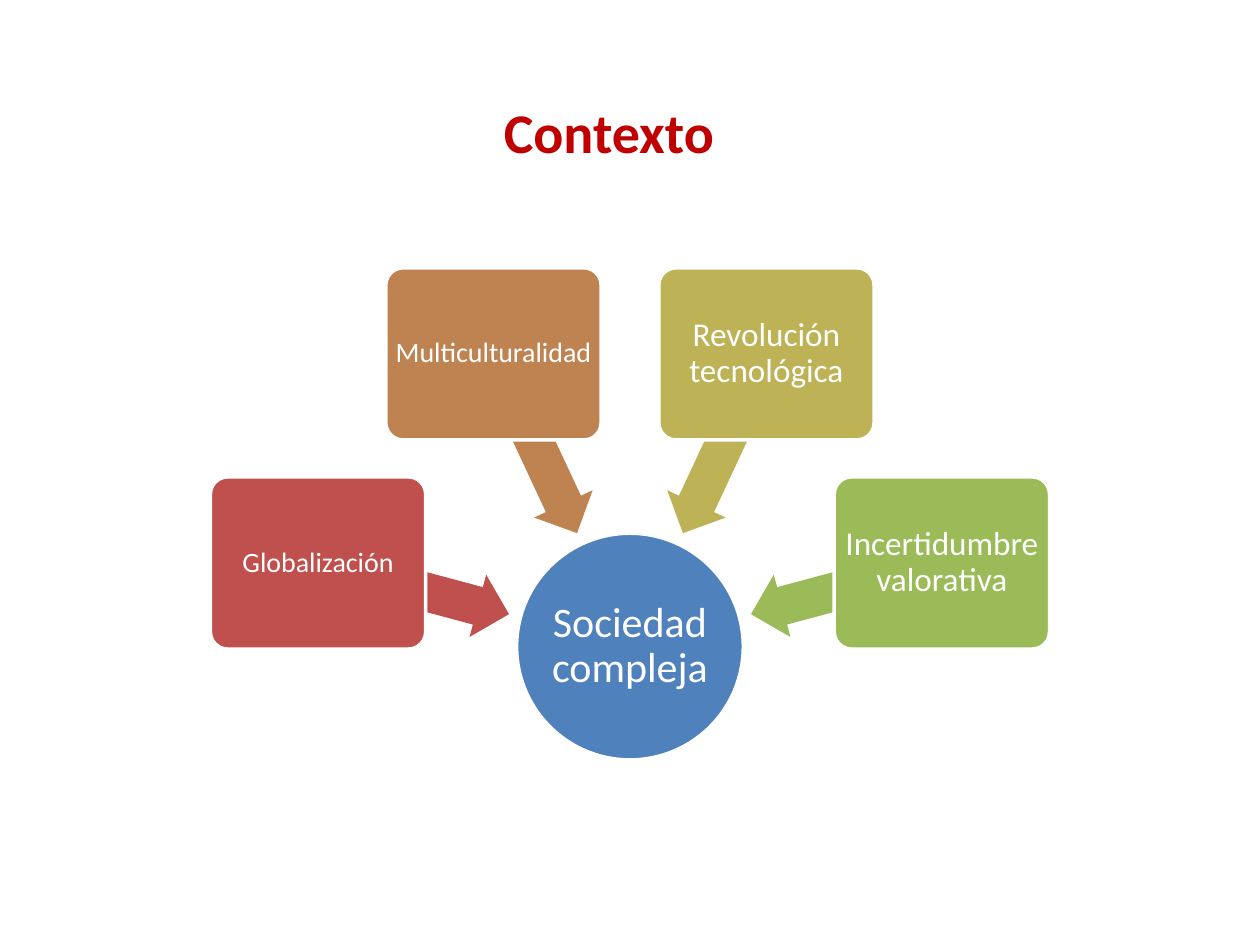
from math import cos, radians, sin

from pptx import Presentation
from pptx.dml.color import RGBColor
from pptx.enum import shapes, text
from pptx.util import Cm, Pt

FONT = "Calibri"
WHITE = RGBColor(0xFF, 0xFF, 0xFF)
TITLE = RGBColor(0xC0, 0x00, 0x00)
BLUE = RGBColor(0x4F, 0x81, 0xBD)
RED = RGBColor(0xC0, 0x50, 0x4D)
BROWN = RGBColor(0xBE, 0x83, 0x51)
OLIVE = RGBColor(0xBD, 0xB2, 0x55)
GREEN = RGBColor(0x9B, 0xBB, 0x59)

CAUSES = [
    ("Globalización", 16, RED),
    ("Multiculturalidad", 16, BROWN),
    ("Revolución tecnológica", 19, OLIVE),
    ("Incertidumbre valorativa", 19, GREEN),
]
START, STEP = 195, 50  # degrees, clockwise from the right


def write(frame, words, size, color, bold=False):
    frame.word_wrap = True
    para = frame.paragraphs[0]
    para.alignment = text.PP_ALIGN.CENTER
    run = para.add_run()
    run.text = words
    font = run.font
    font.name, font.size, font.bold = FONT, Pt(size), bold
    font.color.rgb = color
    return para


def add_form(slide, kind, mid, size, color):
    """Add a filled, unlined shape centred on mid; lengths in cm."""
    (x, y), (w, h) = mid, size
    form = slide.shapes.add_shape(
        kind, Cm(x - w / 2), Cm(y - h / 2), Cm(w), Cm(h))
    form.shadow.inherit = False
    form.fill.solid()
    form.fill.fore_color.rgb = color
    form.line.fill.background()
    return form


def add_node(slide, kind, mid, size, color, words, points, inset):
    """Add a labelled shape; a negative inset widens its text area."""
    node = add_form(slide, kind, mid, size, color)
    node.line.color.rgb = WHITE
    node.line.width = Pt(2)
    frame = node.text_frame
    frame.margin_left = frame.margin_right = Cm(inset)
    frame.margin_top = frame.margin_bottom = Cm(inset)
    frame.vertical_anchor = text.MSO_ANCHOR.MIDDLE
    write(frame, words, points, WHITE).line_spacing = 0.9
    return node


def add_title(slide, x, y, w, h):
    box = slide.shapes.add_textbox(Cm(x), Cm(y), Cm(w), Cm(h))
    write(box.text_frame, "Contexto", 32, TITLE, True)


def add_radial(slide, x, y, w, h):
    """Fan the causes around a hub that sits at the bottom of the box."""
    hub = 4.57
    mid = x + w / 2, y + h - hub / 2
    add_node(slide, shapes.MSO_SHAPE.OVAL, mid, (hub, hub), BLUE,
             "Sociedad compleja", 24, -0.1)

    def spot(angle, reach):
        turn = radians(angle)
        return mid[0] + reach * cos(turn), mid[1] + reach * sin(turn)

    for i, (words, points, color) in enumerate(CAUSES):
        angle = START + i * STEP
        arrow = add_form(slide, shapes.MSO_SHAPE.LEFT_ARROW,
                         spot(angle, 4.52), (3.99, 1.3), color)
        arrow.adjustments[0] = 0.6
        arrow.adjustments[1] = 0.5
        arrow.rotation = angle
        card = add_node(slide, shapes.MSO_SHAPE.ROUNDED_RECTANGLE,
                        spot(angle, 6.51), (4.34, 3.47), color,
                        words, points, 0.08)
        card.adjustments[0] = 0.1


def main():
    deck = Presentation()
    deck.slide_width, deck.slide_height = Cm(25.4), Cm(19.05)
    slide = deck.slides.add_slide(deck.slide_layouts[6])
    add_title(slide, 8.26, 1.85, 8.03, 1.63)
    add_radial(slide, 4.24, 5.38, 16.92, 9.94)
    deck.save("out.pptx")


if __name__ == "__main__":
    main()
